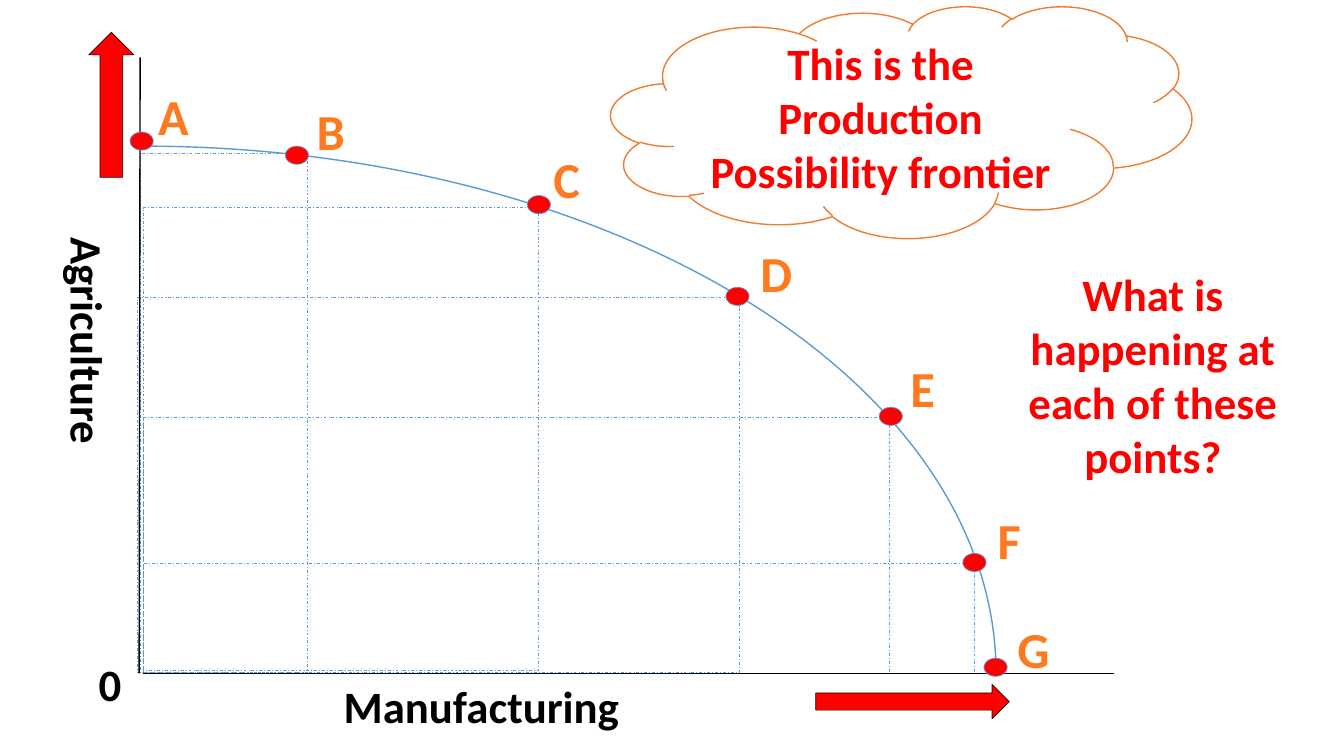
import pptx
import pptx.util
import pptx.dml.color
import pptx.enum.dml
import pptx.enum.shapes
import pptx.enum.text
import pptx.oxml.ns
import lxml.etree

Inches = pptx.util.Inches
Pt = pptx.util.Pt
SHAPES = pptx.enum.shapes.MSO_SHAPE
ALIGN = pptx.enum.text.PP_ALIGN
DASH = pptx.enum.dml.MSO_LINE

COLORS = {"ink": "000000", "red": "FF0000", "curve": "5B9BD5",
          "label": "FF7A1F", "cloud": "ED7D31", "paper": "FFFFFF"}
FONT = "Calibri"
DOT_SIZE = (0.23, 0.18)
LABEL_SIZE = (0.58, 0.71)

# Letter, dot corner, label corner, guide box (left, top, width, height)
POINTS = [
    ("A", (1.29, 1.31), (1.43, 0.79), None),
    ("B", (2.83, 1.45), (2.99, 0.94), (1.39, 1.52, 1.66, 5.15)),
    ("C", (5.23, 1.94), (5.33, 1.42), (1.42, 2.06, 3.92, 4.59)),
    ("D", (7.2, 2.85), (7.41, 2.35), (1.36, 2.95, 5.97, 3.72)),
    ("E", (8.72, 4.04), (8.86, 3.49), (1.42, 4.14, 7.4, 2.54)),
    ("F", (9.55, 5.49), (9.72, 5), (1.42, 5.59, 8.24, 1.09)),
    ("G", (9.76, 6.53), (9.96, 6.08), None),
]


def rgb(name):
    return pptx.dml.color.RGBColor.from_string(COLORS[name])


def add_child(parent, tag, **attributes):
    return lxml.etree.SubElement(parent, pptx.oxml.ns.qn(tag), **attributes)


class FrontierSlide:
    def __init__(self, slide):
        self.shapes = slide.shapes

    def put_words(self, frame, words, color, size=32, align=ALIGN.CENTER):
        frame.word_wrap = True
        paragraph = frame.paragraphs[0]
        paragraph.alignment = align
        run = paragraph.add_run()
        run.text = words
        run.font.name = FONT
        run.font.size = Pt(size)
        run.font.bold = True
        run.font.color.rgb = rgb(color)

    def text(self, box, words, color, size=32, align=ALIGN.CENTER, rotation=0):
        holder = self.shapes.add_textbox(*map(Inches, box))
        holder.rotation = rotation
        self.put_words(holder.text_frame, words, color, size, align)

    def shape(self, preset, box, line, width, fill=None, rotation=0):
        figure = self.shapes.add_shape(preset, *map(Inches, box))
        figure.shadow.inherit = False
        figure.rotation = rotation
        if fill:
            figure.fill.solid()
            figure.fill.fore_color.rgb = rgb(fill)
        else:
            figure.fill.background()
        figure.line.color.rgb = rgb(line)
        figure.line.width = Pt(width)
        return figure

    def guide(self, box):
        outline = self.shape(SHAPES.RECTANGLE, box, "curve", 0.5)
        outline.line.dash_style = DASH.DASH_DOT

    def axis(self, start, end):
        line = self.shapes.add_connector(
            pptx.enum.shapes.MSO_CONNECTOR.STRAIGHT, *map(Inches, start + end))
        line.line.color.rgb = rgb("ink")
        line.line.width = Pt(1)
        add_child(line._element.spPr, "a:effectLst")

    def growth_arrow(self, box, rotation=0):
        arrow = self.shape(SHAPES.UP_ARROW, box, "ink", 0.5, "red", rotation)
        outline = arrow._element.spPr.find(pptx.oxml.ns.qn("a:ln"))
        ink = outline.find(".//" + pptx.oxml.ns.qn("a:srgbClr"))
        add_child(ink, "a:alpha", val="92000")

    def frontier(self, box):
        arc = self.shape(SHAPES.ARC, box, "curve", 1)
        arc.adjustments[0] = 162
        arc.adjustments[1] = 215.808

    def cloud(self, box, words):
        bubble = self.shape(SHAPES.CLOUD, box, "cloud", 1, "paper")
        bubble.text_frame.vertical_anchor = pptx.enum.text.MSO_ANCHOR.MIDDLE
        self.put_words(bubble.text_frame, words, "red")


def main():
    deck = pptx.Presentation()
    deck.slide_width = Inches(13.33)
    deck.slide_height = Inches(7.5)
    chart = FrontierSlide(deck.slides.add_slide(deck.slide_layouts[6]))

    # Guides from each point to the axes
    for letter, dot, label, guide in POINTS:
        if guide:
            chart.guide(guide)

    # Axes and their names
    chart.axis((1.39, 0.57), (1.38, 6.68))
    chart.axis((11.05, 6.68), (1.42, 6.68))
    chart.text((0.88, 6.47, 0.78, 0.64), "0", "ink", align=ALIGN.LEFT)
    chart.text((-0.85, 3.66, 3.45, 0.64), "Agriculture", "ink",
               align=ALIGN.LEFT, rotation=90)
    chart.text((3.31, 6.68, 4.6, 0.64), "Manufacturing", "ink", align=ALIGN.LEFT)
    chart.growth_arrow((0.88, 0.32, 0.45, 1.44))
    chart.growth_arrow((8.88, 6, 0.34, 1.92), rotation=90)

    # Frontier curve with its points
    chart.frontier((-7.05, 1.45, 16.93, 10.46))
    for letter, dot, label, guide in POINTS:
        chart.shape(SHAPES.OVAL, dot + DOT_SIZE, "curve", 0.5, "red")
        chart.text(label + LABEL_SIZE, letter, "label", size=36)

    # Question and explanation
    chart.text((9.67, 2.6, 3.53, 2.26),
               "What is happening at each of these points?", "red")
    chart.cloud((6.06, 0.06, 5.76, 2.3),
                "This is the Production Possibility frontier")

    deck.save("out.pptx")


if __name__ == "__main__":
    main()
